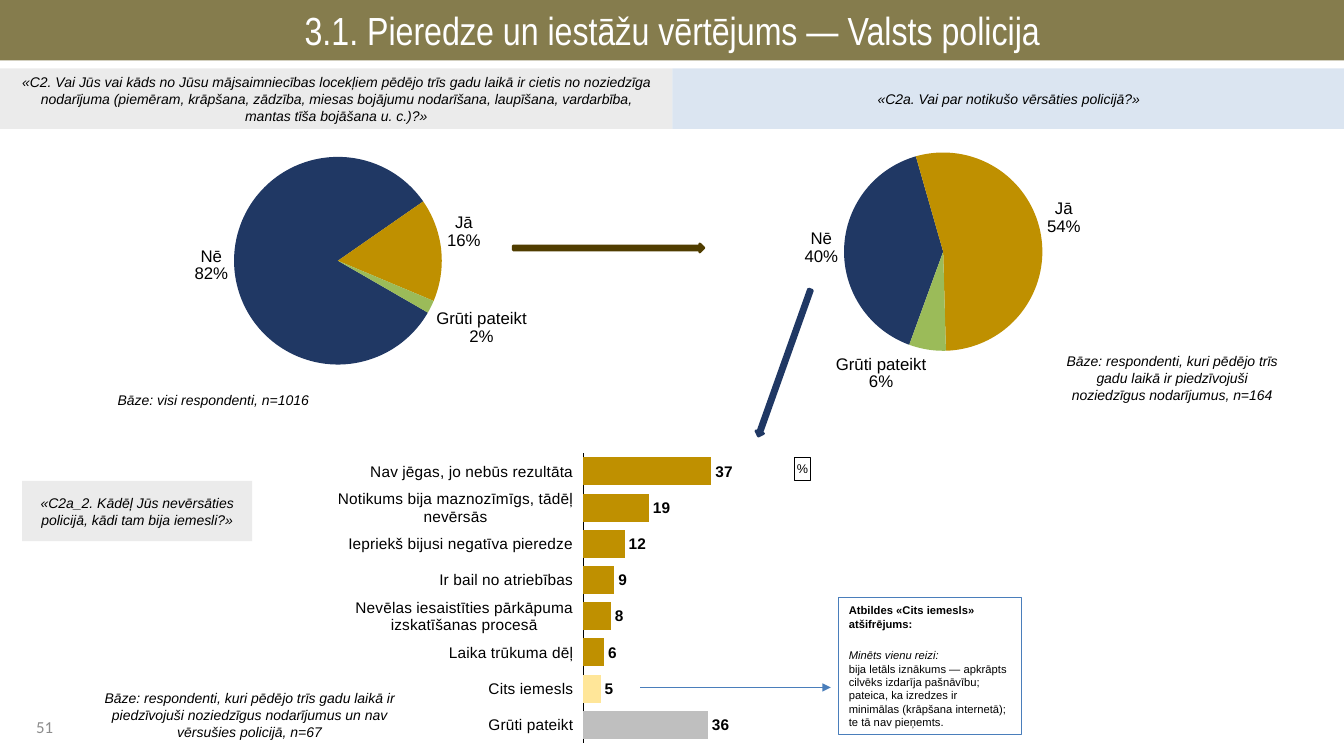
from dataclasses import dataclass
from typing import Any

from lxml import etree
from pptx import Presentation
from pptx.chart.data import CategoryChartData
from pptx.dml.color import RGBColor
from pptx.enum.chart import XL_CHART_TYPE, XL_LABEL_POSITION, XL_TICK_LABEL_POSITION, XL_TICK_MARK
from pptx.enum.shapes import MSO_CONNECTOR, MSO_SHAPE
from pptx.enum.text import MSO_ANCHOR, PP_ALIGN
from pptx.oxml import parse_xml
from pptx.oxml.ns import nsdecls, qn
from pptx.util import Emu, Pt

PIE, BAR = XL_CHART_TYPE.PIE, XL_CHART_TYPE.BAR_CLUSTERED
OUTER = XL_LABEL_POSITION.OUTSIDE_END
NONE, LOW = XL_TICK_MARK.NONE, XL_TICK_LABEL_POSITION.LOW
RECT, ARROW = MSO_SHAPE.RECTANGLE, MSO_SHAPE.RIGHT_ARROW
STRAIGHT = MSO_CONNECTOR.STRAIGHT
LEFT, CENTER, MIDDLE = PP_ALIGN.LEFT, PP_ALIGN.CENTER, MSO_ANCHOR.MIDDLE
PX = 9144

COLORS = {
    "black": "000000", "white": "FFFFFF", "muted": "8C8C8C", "olive": "857C4D",
    "grey": "D9D9D9", "sky": "B9CDE5", "brown": "503D00", "navy": "203864",
    "gold": "BF9000", "green": "9BBB59", "cream": "FFE699", "silver": "BFBFBF",
    "blue": "4A7EBB",
}
TITLE = {"size": Pt(28), "name": "Arial Narrow"}
NOTE = {"size": Pt(10), "name": "Arial", "italic": True}
SMALL = {"size": Pt(8), "name": "Arial"}
PAGE = {"size": Pt(12), "name": "Calibri"}
LABEL = {"size": Pt(12), "name": "Arial"}
AXIS = {"size": Pt(11), "name": "Arial"}
VALUE = {"size": Pt(11), "name": "Arial", "bold": True}
SIGN = {"size": Pt(9), "name": "Arial", "bold": False}

Box = tuple[int, int, int, int]


@dataclass
class Panel:
    box: Box
    fill: str
    text: str
    font: dict[str, Any]
    ink: str = "black"
    alpha: int = 100


@dataclass
class Note:
    box: Box
    lines: list[str]
    font: dict[str, Any]
    ink: str = "black"
    align: PP_ALIGN = CENTER


@dataclass
class Arrow:
    box: Box
    color: str
    turn: float


@dataclass
class Pie:
    box: Box
    values: tuple[int, ...]
    start: int


PANELS = [
    Panel((0, 0, 1333, 60), "olive", "3.1. Pieredze un iestāžu vērtējums — Valsts policija", TITLE, "white"),
    Panel((0, 68, 667, 60), "grey", "«C2. Vai Jūs vai kāds no Jūsu mājsaimniecības locekļiem pēdējo trīs gadu "
          "laikā ir cietis no noziedzīga nodarījuma (piemēram, krāpšana, zādzība, miesas bojājumu nodarīšana, "
          "laupīšana, vardarbība,\nmantas tīša bojāšana u. c.)?»", NOTE, alpha=50),
    Panel((667, 68, 667, 60), "sky", "«C2a. Vai par notikušo vērsāties policijā?»", NOTE, alpha=50),
    Panel((22, 477, 228, 60), "grey", "«C2a_2. Kādēļ Jūs nevērsāties policijā, kādi tam bija iemesli?»", NOTE, alpha=50),
]
NOTES = [
    Note((26, 703, 142, 36), ["51"], PAGE, "muted", LEFT),
    Note((1044, 320, 237, 110), ["Bāze: respondenti, kuri pēdējo trīs gadu laikā ir piedzīvojuši",
                                 "noziedzīgus nodarījumus, n=164"], NOTE),
    Note((90, 676, 315, 66), ["Bāze: respondenti, kuri pēdējo trīs gadu laikā ir piedzīvojuši noziedzīgus "
                              "nodarījumus un nav\nvērsušies policijā, n=67"], NOTE),
    Note((100, 365, 223, 63), ["Bāze: visi respondenti, n=1016"], NOTE),
]
ARROWS = [Arrow((509, 242, 189, 8), "brown", 0), Arrow((701, 356, 154, 8), "navy", 109.6)]
PIES = [Pie((635, 127, 598, 294), (40, 54, 6), 200), Pie((0, 136, 667, 294), (82, 16, 2), 120)]
SLICES = {"Nē": "navy", "Jā": "gold", "Grūti pateikt": "green"}
REASONS = {
    "Nav jēgas, jo nebūs rezultāta": 37, "Notikums bija maznozīmīgs, tādēļ nevērsās": 19,
    "Iepriekš bijusi negatīva pieredze": 12, "Ir bail no atriebības": 9,
    "Nevēlas iesaistīties pārkāpuma izskatīšanas procesā": 8, "Laika trūkuma dēļ": 6,
    "Cits iemesls": 5, "Grūti pateikt": 36,
}
OTHER = ["Atbildes «Cits iemesls»\natšifrējums:", "Minēts vienu reizi:",
         "bija letāls iznākums — apkrāpts\ncilvēks izdarīja pašnāvību;", "pateica, ka izredzes ir",
         "minimālas (krāpšana internetā);", "te tā nav pieņemts."]


def scale(box: Box) -> list[Emu]:
    return [Emu(side * PX) for side in box]


def tint(name: str) -> RGBColor:
    return RGBColor.from_string(COLORS[name])


def style(target: Any, values: dict[str, Any]) -> None:
    for key, value in values.items():
        setattr(target, key, value)


def ink(font: Any, values: dict[str, Any], color: str = "black") -> None:
    style(font, values)
    font.color.rgb = tint(color)


def paint(fill: Any, color: str) -> None:
    fill.solid()
    fill.fore_color.rgb = tint(color)


def write(frame: Any, lines: list[str], font: dict[str, Any], color: str, align: PP_ALIGN) -> None:
    style(frame, {"word_wrap": True, "vertical_anchor": MIDDLE})
    for rank, line in enumerate(lines):
        para = frame.add_paragraph() if rank else frame.paragraphs[0]
        para.alignment = align
        for part, text in enumerate(line.split("\n")):
            if part:
                para.add_line_break()
            run = para.add_run()
            run.text = text
            ink(run.font, font, color)


def add_panel(slide: Any, panel: Panel) -> None:
    shape = slide.shapes.add_shape(RECT, *scale(panel.box))
    shape.shadow.inherit = False
    paint(shape.fill, panel.fill)
    shape.line.fill.background()
    if panel.alpha < 100:
        tone = shape.element.spPr.find(".//" + qn("a:srgbClr"))
        etree.SubElement(tone, qn("a:alpha"), val=str(panel.alpha * 1000))
    write(shape.text_frame, [panel.text], panel.font, panel.ink, CENTER)


def add_note(slide: Any, note: Note) -> None:
    frame = slide.shapes.add_textbox(*scale(note.box)).text_frame
    write(frame, note.lines, note.font, note.ink, note.align)


def add_arrow(slide: Any, arrow: Arrow) -> None:
    shape = slide.shapes.add_shape(ARROW, *scale(arrow.box))
    shape.shadow.inherit = False
    shape.rotation = arrow.turn
    paint(shape.fill, arrow.color)
    paint(shape.line.fill, arrow.color)
    shape.line.width = Pt(2)


def layout(sides: dict[str, float], inner: bool = True) -> Any:
    target = '<c:layoutTarget val="inner"/>' if inner else ""
    modes = "".join(f'<c:{side}Mode val="edge"/>' for side in ("x", "y"))
    spots = "".join(f'<c:{side} val="{value}"/>' for side, value in sides.items())
    return parse_xml(f'<c:layout {nsdecls("c")}><c:manualLayout>{target}{modes}{spots}</c:manualLayout></c:layout>')


def add_chart(slide: Any, kind: Any, box: Box, names: list[str], values: Any,
              colors: list[str], plan: dict[str, float]) -> Any:
    data = CategoryChartData(number_format="0")
    data.categories = names
    data.add_series("Series 1", values)
    chart = slide.shapes.add_chart(kind, *scale(box), data).chart
    style(chart, {"has_legend": False, "has_title": False})
    ink(chart.font, {"size": Pt(10), "name": "Arial"})
    chart.plots[0].vary_by_categories = False
    series = chart.plots[0].series[0]
    paint(series.format.fill, "gold")
    for rank, color in enumerate(colors):
        paint(series.points[rank].format.fill, color)
    area = chart.element.xpath("c:chart/c:plotArea")[0]
    for old in area.findall(qn("c:layout")):
        area.remove(old)
    area.insert(0, layout(plan))
    return chart


def add_pie(slide: Any, pie: Pie) -> None:
    chart = add_chart(slide, PIE, pie.box, list(SLICES), pie.values, list(SLICES.values()),
                      {"x": 0.338, "y": 0.067, "w": 0.329, "h": 0.701})
    labels = chart.plots[0].series[0].data_labels
    style(labels, {"show_value": False, "show_percentage": True, "show_category_name": True,
                   "number_format": "0%", "number_format_is_linked": False, "position": OUTER})
    ink(labels.font, LABEL)
    mark = chart.element.xpath(".//c:ser/c:dLbls/c:showBubbleSize")
    gap = parse_xml(f'<c:separator {nsdecls("c")}>\n</c:separator>')
    if mark:
        mark[0].addnext(gap)
    else:
        chart.element.xpath(".//c:ser/c:dLbls/c:showPercent")[0].addnext(gap)
    ring = chart.element.xpath(".//c:pieChart")[0]
    for old in ring.findall(qn("c:firstSliceAng")):
        ring.remove(old)
    etree.SubElement(ring, qn("c:firstSliceAng"), val=str(pie.start))


def add_bars(slide: Any) -> None:
    colors = ["gold"] * 6 + ["cream", "silver"]
    chart = add_chart(slide, BAR, (302, 447, 620, 297), list(REASONS), list(REASONS.values()), colors,
                      {"x": 0.446, "y": 0.009, "w": 0.554, "h": 0.968})
    chart.plots[0].gap_width = 30
    labels = chart.plots[0].series[0].data_labels
    style(labels, {"show_value": True, "number_format": "0", "number_format_is_linked": False, "position": OUTER})
    ink(labels.font, VALUE)
    style(chart.value_axis, {"visible": False, "has_major_gridlines": False,
                             "minimum_scale": 0, "maximum_scale": 100})
    axis = chart.category_axis
    style(axis, {"reverse_order": True, "major_tick_mark": NONE, "minor_tick_mark": NONE,
                 "tick_label_position": LOW})
    ink(axis.tick_labels.font, AXIS)
    paint(axis.format.line.fill, "black")
    axis.format.line.width = Pt(0.25)
    chart.has_title = True
    title = chart.chart_title
    title.include_in_layout = False
    title.text_frame.text = "%"
    ink(title.text_frame.paragraphs[0].runs[0].font, SIGN)
    paint(title.format.line.fill, "black")
    title.format.line.width = Pt(0.75)
    for old in title.element.findall(qn("c:layout")):
        title.element.remove(old)
    title.element.find(qn("c:tx")).addnext(layout({"x": 0.784, "y": 0.024}, False))


def add_other(slide: Any) -> None:
    link = slide.shapes.add_connector(STRAIGHT, *scale((635, 682, 824, 682)))
    card = slide.shapes.add_shape(RECT, *scale((832, 593, 181, 136)))
    card.shadow.inherit = False
    card.fill.background()
    for shape in (link, card):
        paint(shape.line.fill, "blue")
        shape.line.width = Pt(0.75)
    etree.SubElement(link.line._get_or_add_ln(), qn("a:tailEnd"), type="triangle")
    etree.SubElement(link.element.spPr, qn("a:effectLst"))
    write(card.text_frame, OTHER, SMALL, "black", LEFT)
    head, lead = card.text_frame.paragraphs[:2]
    head.space_after = Pt(13)
    for run in head.runs:
        run.font.bold = True
    lead.runs[0].font.italic = True


def main() -> None:
    deck = Presentation()
    style(deck, {"slide_width": Emu(1333 * PX), "slide_height": Emu(750 * PX)})
    slide = deck.slides.add_slide(deck.slide_layouts[6])
    add_bars(slide)
    for draw, items in ((add_pie, PIES), (add_panel, PANELS), (add_arrow, ARROWS), (add_note, NOTES)):
        for item in items:
            draw(slide, item)
    add_other(slide)
    deck.save("out.pptx")


if __name__ == "__main__":
    main()
